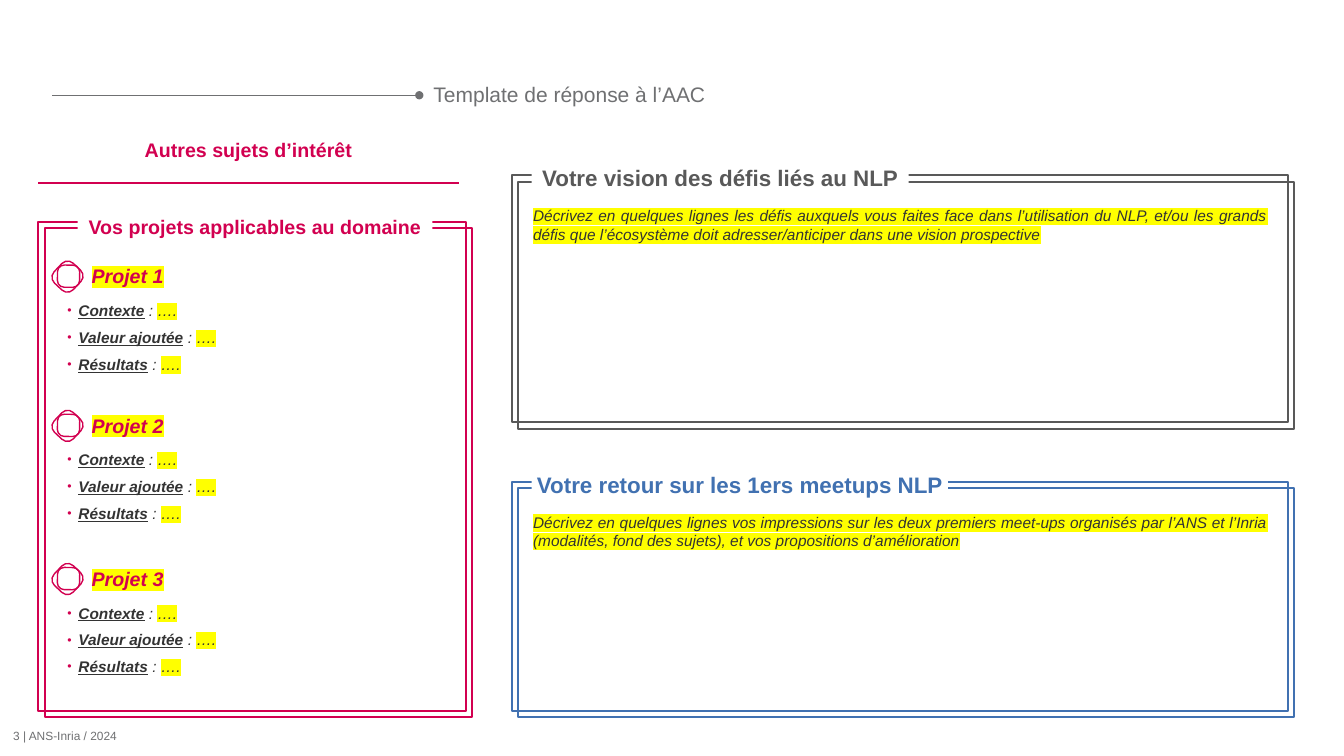
from dataclasses import dataclass

from lxml import etree
from pptx import Presentation
from pptx.dml.color import RGBColor
from pptx.enum.shapes import MSO_CONNECTOR, MSO_SHAPE
from pptx.enum.text import MSO_ANCHOR, MSO_AUTO_SIZE, PP_ALIGN
from pptx.oxml.ns import qn
from pptx.util import Inches, Pt

STRAIGHT = MSO_CONNECTOR.STRAIGHT
RECT, ROUNDED = MSO_SHAPE.RECTANGLE, MSO_SHAPE.ROUNDED_RECTANGLE
TOP, MIDDLE = MSO_ANCHOR.TOP, MSO_ANCHOR.MIDDLE
LEFT, CENTER, JUSTIFY = PP_ALIGN.LEFT, PP_ALIGN.CENTER, PP_ALIGN.JUSTIFY
NO_AUTOFIT = MSO_AUTO_SIZE.NONE

COLS, ROWS = 160, 90
SLIDE_W, SLIDE_H = Inches(13.33), Inches(7.5)
FRAME_SHIFT = 0.75
BULLET_INDENT = Inches(0.11)


@dataclass(frozen=True)
class Theme:
    """Colours, font and type sizes of the slide."""
    font: str = "Arial"
    pink: str = "D20050"
    blue: str = "4171B1"
    slate: str = "595959"
    grey: str = "6F7072"
    ink: str = "333333"
    white: str = "FFFFFF"
    marker: str = "FFFF00"
    footer: float = 8.5
    body: float = 11
    heading: float = 14
    title: float = 15
    panel: float = 16


THEME = Theme()


def gx(cols):
    """Convert grid columns to a length."""
    return int(SLIDE_W * cols / COLS)


def gy(rows):
    """Convert grid rows to a length."""
    return int(SLIDE_H * rows / ROWS)


def place(x, y, w, h):
    """Convert a grid box to left, top, width and height."""
    return gx(x), gy(y), gx(w), gy(h)


def add_bullet(p):
    """Give a paragraph a small pink bullet with a hanging indent."""
    pPr = p._p.get_or_add_pPr()
    pPr.set("marL", str(BULLET_INDENT))
    pPr.set("indent", str(-BULLET_INDENT))
    color = etree.SubElement(pPr, qn("a:buClr"))
    etree.SubElement(color, qn("a:srgbClr"), val=THEME.pink)
    etree.SubElement(pPr, qn("a:buSzPct"), val="80000")
    etree.SubElement(pPr, qn("a:buFont"), typeface=THEME.font)
    etree.SubElement(pPr, qn("a:buChar"), char="•")


def add_run(p, text, size, color, bold=False, italic=False, underline=False, marked=False):
    """Add one formatted run to a paragraph."""
    r = p.add_run()
    r.text = text
    font = r.font
    font.size, font.bold, font.italic, font.underline = Pt(size), bold, italic, underline
    font.color.rgb = RGBColor.from_string(color)
    font.name = THEME.font
    if marked:
        highlight = etree.Element(qn("a:highlight"))
        etree.SubElement(highlight, qn("a:srgbClr"), val=THEME.marker)
        r._r.rPr.find(qn("a:latin")).addprevious(highlight)


def write(sp, paragraphs, align=LEFT, anchor=TOP, after=0, spacing=None,
          bullet=False, margin=None, **fmt):
    """Write a string, or paragraphs of (text, overrides) runs, into a shape."""
    if isinstance(paragraphs, str):
        paragraphs = [[(paragraphs, {})]]
    tf = sp.text_frame
    tf.word_wrap, tf.auto_size, tf.vertical_anchor = True, NO_AUTOFIT, anchor
    if margin is not None:
        tf.margin_left = tf.margin_right = tf.margin_top = tf.margin_bottom = margin
    for i, runs in enumerate(paragraphs):
        p = tf.add_paragraph() if i else tf.paragraphs[0]
        if bullet:
            add_bullet(p)
        p.alignment, p.space_before, p.space_after = align, Pt(0), Pt(after)
        if spacing:
            p.line_spacing = spacing
        for text, overrides in runs:
            add_run(p, text, **{**fmt, **overrides})


def add_text(shapes, box, paragraphs, **fmt):
    """Add a text box on the grid."""
    write(shapes.add_textbox(*place(*box)), paragraphs, **fmt)


def add_box(shapes, box, kind=RECT, fill=None, line=None, width=1.5):
    """Add a filled or outlined shape on the grid."""
    sp = shapes.add_shape(kind, *place(*box))
    sp.shadow.inherit = False
    if fill:
        sp.fill.solid()
        sp.fill.fore_color.rgb = RGBColor.from_string(fill)
    else:
        sp.fill.background()
    if line:
        sp.line.color.rgb = RGBColor.from_string(line)
        sp.line.width = Pt(width)
    else:
        sp.line.fill.background()
    return sp


def add_rule(shapes, x, y, w, color, width, dot=False):
    """Add a horizontal line, with a dot at its right end on request."""
    cn = shapes.add_connector(STRAIGHT, gx(x), gy(y), gx(x + w), gy(y))
    cn.line.color.rgb = RGBColor.from_string(color)
    cn.line.width = Pt(width)
    if dot:
        etree.SubElement(cn.line._get_or_add_ln(), qn("a:tailEnd"), type="oval")
    etree.SubElement(cn._element.spPr, qn("a:effectLst"))


def add_frame(shapes, box, color):
    """Add a double outline made of two shifted rectangles."""
    x, y, w, h = box
    for shift in (FRAME_SHIFT, 0):
        add_box(shapes, (x + shift, y + shift, w, h), line=color)


def add_header(s, box):
    """Place the title and the dotted line that leads to it."""
    x, y, w, h = box
    lead = 44.16
    add_rule(s.shapes, x, y + h / 2, lead - 0.48, THEME.grey, 0.75, dot=True)
    title = s.shapes.title
    title.left, title.top, title.width, title.height = place(x + lead, y, w - lead, h)
    write(title, "Template de réponse à l’AAC", anchor=MIDDLE, spacing=0.9,
          size=THEME.title, color=THEME.grey)


def add_topic(shapes, box):
    """Add the underlined heading of the left column."""
    x, y, w, h = box
    add_text(shapes, (x, y, w, 4.08), "Autres sujets d’intérêt", align=CENTER,
             size=THEME.heading, color=THEME.pink, bold=True)
    add_rule(shapes, x, y + h, w, THEME.pink, 1.5)


def add_project(shapes, box, name):
    """Add one project as a group of icon, name and bulleted details."""
    x, y, w, h = box
    group = shapes.add_group_shape().shapes
    icon = ((0, 0.6, 3.12, 3.24, 43.3), (0.36, 0.84, 2.64, 2.64, 91))
    for dx, dy, iw, ih, angle in icon:
        petal = add_box(group, (x + dx, y + dy, iw, ih), ROUNDED, line=THEME.pink, width=1)
        petal.adjustments[0] = 0.305
        petal.rotation = angle
    add_text(group, (x + 3.24, y, 34.2, 4.32), name, anchor=MIDDLE, size=THEME.heading,
             color=THEME.pink, bold=True, italic=True, marked=True)
    details = [[(label, {"bold": True, "underline": True}), (" : ", {}), ("….", {"marked": True})]
               for label in ("Contexte", "Valeur ajoutée", "Résultats")]
    add_text(group, (x + 0.36, y + 4.56, w - 0.36, h - 4.56), details, align=JUSTIFY,
             after=6, bullet=True, size=THEME.body, color=THEME.ink, italic=True)


def add_projects_panel(shapes, box):
    """Add the framed panel that lists the projects."""
    x, y, w, h = box
    add_frame(shapes, box, THEME.pink)
    label = add_box(shapes, (x + 4.68, y - 1.56, 42.24, 4.2), fill=THEME.white)
    write(label, "Vos projets applicables au domaine", align=CENTER, anchor=MIDDLE,
          size=THEME.heading, color=THEME.pink, bold=True)
    for number, dy in enumerate((4.32, 22.08, 40.32), 1):
        add_project(shapes, (x + 1.92, y + dy, 47.64, 15.84), f"Projet {number}")


def add_answer_panel(shapes, box, label_w, label, prompt, color):
    """Add a framed panel with a heading set into its top edge and a prompt."""
    x, y, w, h = box
    add_frame(shapes, box, color)
    add_box(shapes, (x + 2.4, y - 2.64, label_w, 4.32), fill=THEME.white)
    add_text(shapes, (x + 1.5, y - 2.04, label_w + 1.8, 4.68), label, align=CENTER,
             anchor=MIDDLE, size=THEME.panel, color=color, bold=True)
    add_text(shapes, (x + 1.38, y + 3.12, w - 2.58, 7.44), prompt, align=JUSTIFY,
             size=THEME.body, color=THEME.ink, italic=True, marked=True)


def main():
    """Build the slide and save it."""
    prs = Presentation()
    prs.slide_width, prs.slide_height = SLIDE_W, SLIDE_H
    s = prs.slides.add_slide(prs.slide_layouts[5])
    shapes = s.shapes
    add_text(shapes, (1.56, 86.64, 86.52, 1.68), "3 | ANS-Inria / 2024", spacing=Pt(11),
             margin=0, size=THEME.footer, color=THEME.grey)
    add_header(s, (6.24, 9.36, 136.56, 3.96))
    add_topic(shapes, (4.56, 15.84, 50.04, 6))
    add_projects_panel(shapes, (4.56, 26.4, 50.88, 58.2))
    add_answer_panel(
        shapes, (60.9, 57.36, 92.4, 27.24), 49.56, "Votre retour sur les 1ers meetups NLP",
        "Décrivez en quelques lignes vos impressions sur les deux premiers meet-ups organisés par "
        "l’ANS et l’Inria (modalités, fond des sujets), et vos propositions d’amélioration",
        THEME.blue)
    add_answer_panel(
        shapes, (60.9, 20.88, 92.4, 29.4), 44.88, "Votre vision des défis liés au NLP",
        "Décrivez en quelques lignes les défis auxquels vous faites face dans l’utilisation du NLP, "
        "et/ou les grands défis que l’écosystème doit adresser/anticiper dans une vision prospective",
        THEME.slate)
    prs.save("out.pptx")


if __name__ == "__main__":
    main()
